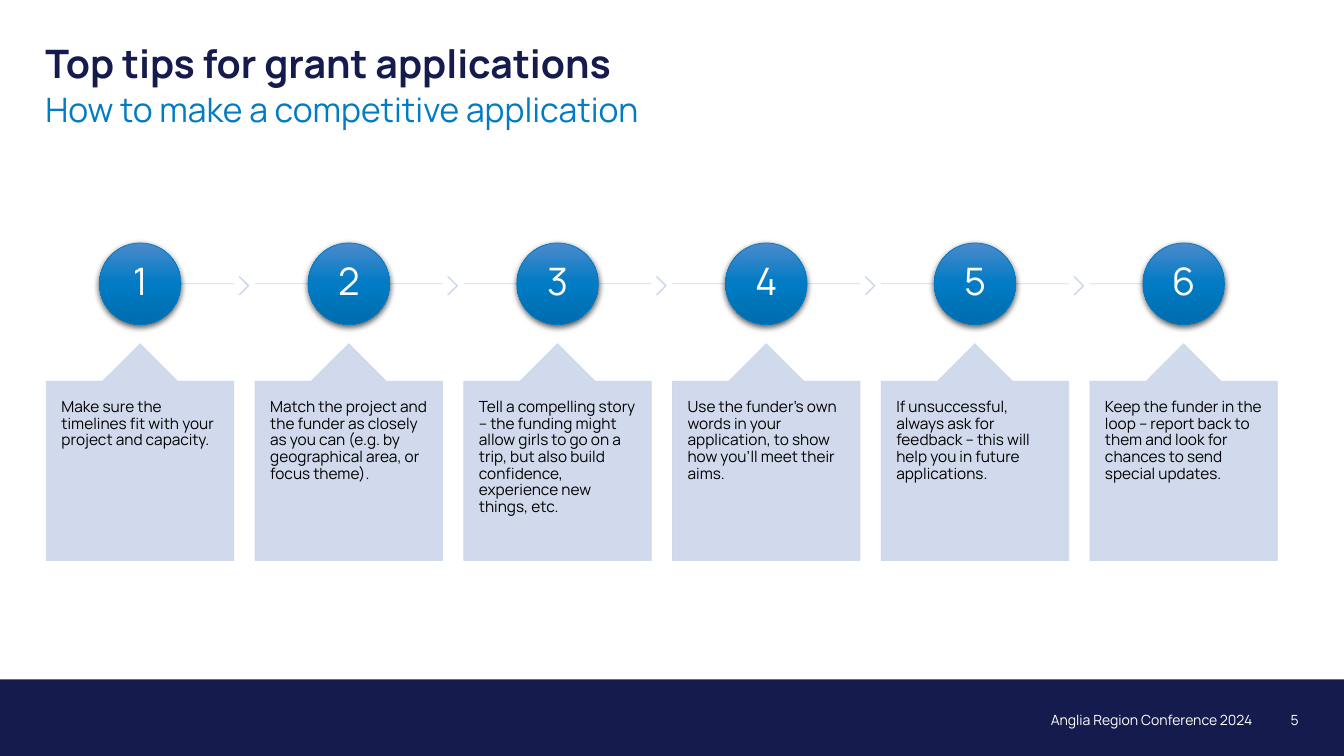
from copy import deepcopy
from lxml import etree
from pptx import Presentation, util as u
from pptx.dml.color import RGBColor
from pptx.enum import shapes, text
from pptx.oxml.ns import qn

WIDTH, HEIGHT = 13.33, 7.5
MARGIN = 0.45
COLORS = {"navy": "161B4E", "blue": "007BC4", "light_blue": "4B8ACC", "deep_blue": "006DAE",
          "pale": "CCD7EA", "white": "FFFFFF", "black": "000000"}
TIPS = [
    "Make sure the timelines fit with your project and capacity.",
    "Match the project and the funder as closely as you can (e.g. by geographical area, or focus theme).",
    "Tell a compelling story – the funding might allow girls to go on a trip, but also build confidence, "
    "experience new things, etc.",
    "Use the funder's own words in your application, to show how you'll meet their aims.",
    "If unsuccessful, always ask for feedback – this will help you in future applications.",
    "Keep the funder in the loop – report back to them and look for chances to send special updates.",
]


def color(name):
    return RGBColor.from_string(COLORS[name])


def write(shape, words, size, ink, align=text.PP_ALIGN.LEFT, anchor=text.MSO_ANCHOR.TOP,
          insets=(0, 0), spacing=1.0, bold=False):
    frame = shape.text_frame
    frame.word_wrap = True
    frame.vertical_anchor = anchor
    frame.margin_left = frame.margin_right = u.Inches(insets[0])
    frame.margin_top = frame.margin_bottom = u.Inches(insets[1])
    paragraph = frame.paragraphs[0]
    paragraph.text = words
    paragraph.alignment = align
    paragraph.line_spacing = spacing
    paragraph.font.name = "Manrope"
    paragraph.font.size = u.Pt(size)
    paragraph.font.bold = bold
    paragraph.font.color.rgb = color(ink)


def add_text(slide, box, words, size, ink, **style):
    write(slide.shapes.add_textbox(*map(u.Inches, box)), words, size, ink, **style)


def add_shape(slide, kind, box, fill, adjustments=()):
    shape = slide.shapes.add_shape(kind, *map(u.Inches, box))
    shape.shadow.inherit = False
    shape.fill.solid()
    shape.fill.fore_color.rgb = color(fill)
    shape.line.color.rgb = color(fill)
    shape.line.width = u.Pt(0.5)
    for index, value in enumerate(adjustments):
        shape.adjustments[index] = value
    return shape


def soften(shape):
    for tint in shape._element.spPr.iter(qn("a:srgbClr")):
        etree.SubElement(tint, qn("a:alpha"), val="90000")


def add_line(slide, left, right, y):
    line = slide.shapes.add_connector(shapes.MSO_CONNECTOR.STRAIGHT, *map(u.Inches, (left, y, right, y)))
    line.line.color.rgb = color("pale")
    line.line.width = u.Pt(0.5)
    etree.SubElement(line._element.spPr, qn("a:effectLst"))
    soften(line)


def add_badge(slide, box, number):
    badge = add_shape(slide, shapes.MSO_SHAPE.OVAL, box, "blue")
    badge.fill.gradient()
    badge.fill.gradient_angle = 270
    stop_list = badge._element.spPr.find(".//" + qn("a:gsLst"))
    stop_list.append(deepcopy(stop_list[-1]))
    for stop, name, position in zip(badge.fill.gradient_stops, ("light_blue", "blue", "deep_blue"), (0, 0.5, 1)):
        stop.color.rgb = color(name)
        stop.position = position
    effects = badge._element.spPr.find(qn("a:effectLst"))
    shadow = etree.SubElement(effects, qn("a:outerShdw"), blurRad=str(u.Pt(4.5)), dist=str(u.Pt(1.5)),
                              dir="5400000", rotWithShape="0")
    tint = etree.SubElement(shadow, qn("a:srgbClr"), val=COLORS["black"])
    etree.SubElement(tint, qn("a:alpha"), val="63000")
    write(badge, str(number), 27, "white", align=text.PP_ALIGN.CENTER, anchor=text.MSO_ANCHOR.MIDDLE,
          insets=(0.03, 0.03), spacing=0.9)


def build_header(slide, left, top, width, row):
    add_text(slide, (left, top, width, row), "Top tips for grant applications", 28, "navy", spacing=0.9, bold=True)
    add_text(slide, (left, top + row, width, row), "How to make a competitive application", 24, "blue")


def build_steps(slide, left, top, width, height):
    gap = 0.21
    column = (width - gap * (len(TIPS) - 1)) / len(TIPS)
    badge = 0.81
    axis = top + badge / 2
    callout_top = top + 1.0
    callout_height = height - 1.0
    for index, tip in enumerate(TIPS):
        x = left + index * (column + gap)
        center = x + column / 2
        is_last = index == len(TIPS) - 1
        add_line(slide, x if index else center, center if is_last else x + column, axis)
        if not is_last:
            chevron = add_shape(slide, shapes.MSO_SHAPE.CHEVRON, (x + column + 0.05, axis - 0.07, 0.1, 0.18),
                                "pale", (0.9,))
            soften(chevron)
        add_badge(slide, (center - badge / 2, top, badge, badge), index + 1)
        body_share = 1 - 0.2 * column / callout_height
        callout = add_shape(slide, shapes.MSO_SHAPE.UP_ARROW_CALLOUT, (x, callout_top, column, callout_height),
                            "pale", (0.5, 0.2, 0.2, body_share))
        soften(callout)
        write(callout, tip, 11, "black", insets=(0.15, 0.18), spacing=0.9)


def build_footer(slide, left, top, width, height):
    band = add_shape(slide, shapes.MSO_SHAPE.RECTANGLE, (left, top, width, height), "navy")
    band.line.fill.background()
    row_top, row, right = top + 0.29, 0.23, left + width - MARGIN
    number_width, label_width = 0.46, 5.74
    style = {"align": text.PP_ALIGN.RIGHT, "anchor": text.MSO_ANCHOR.MIDDLE}
    add_text(slide, (right - number_width - label_width, row_top, label_width, row),
             "Anglia Region Conference 2024", 10, "white", **style)
    add_text(slide, (right - number_width, row_top, number_width, row), "5", 10, "white", **style)


def main():
    presentation = Presentation()
    presentation.slide_width = u.Inches(WIDTH)
    presentation.slide_height = u.Inches(HEIGHT)
    slide = presentation.slides.add_slide(presentation.slide_layouts[6])
    build_footer(slide, 0, 6.74, WIDTH, HEIGHT - 6.74)
    build_header(slide, MARGIN, 0.44, WIDTH - 2 * MARGIN, 0.44)
    build_steps(slide, 0.46, 2.41, 12.21, 3.15)
    presentation.save("out.pptx")


if __name__ == "__main__":
    main()
